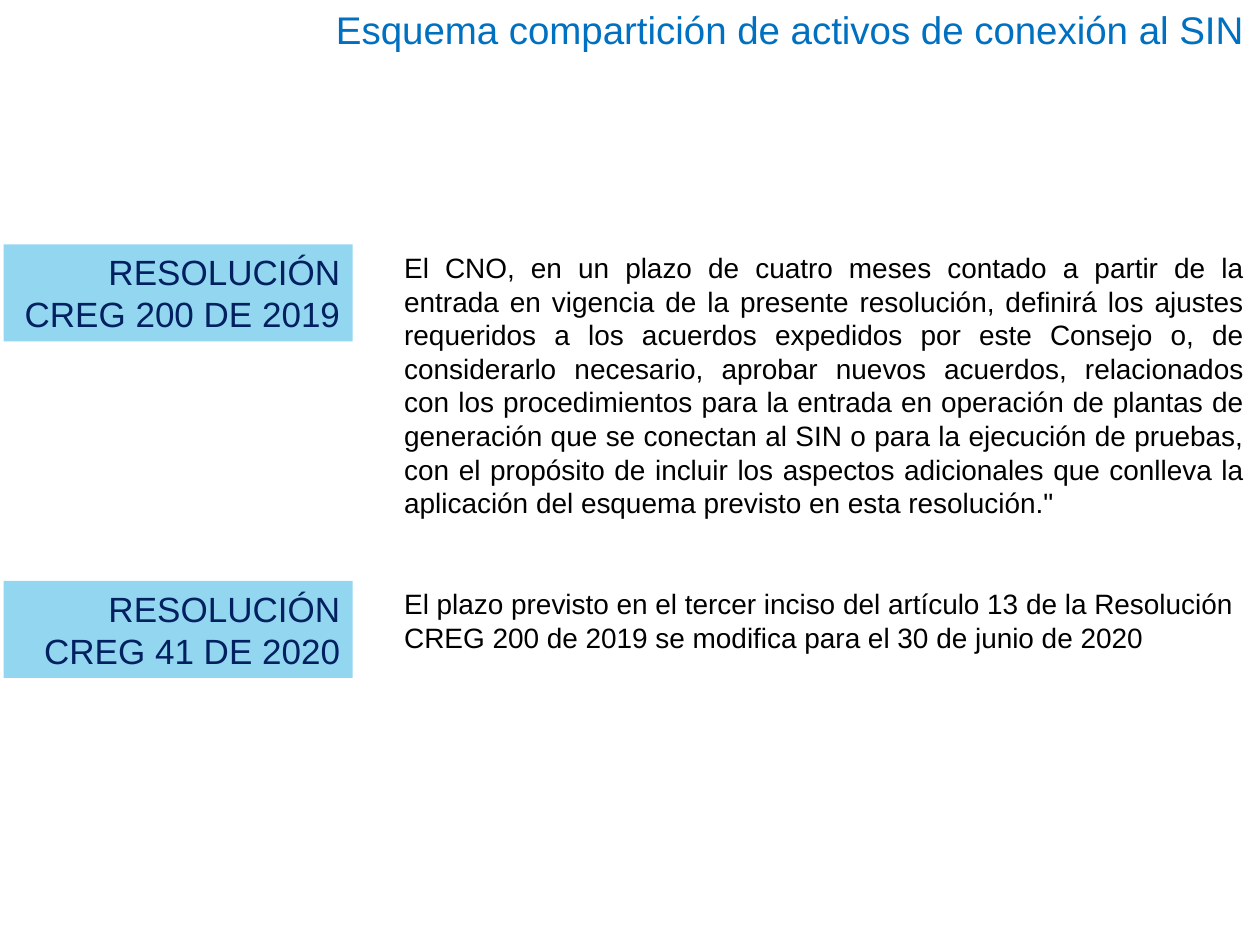
from pptx import Presentation
from pptx.dml.color import RGBColor
from pptx.enum.shapes import MSO_SHAPE
from pptx.enum.text import MSO_ANCHOR, PP_ALIGN
from pptx.util import Inches, Pt

RECT = MSO_SHAPE.RECTANGLE
TOP = MSO_ANCHOR.TOP
LEFT, RIGHT, JUSTIFY = PP_ALIGN.LEFT, PP_ALIGN.RIGHT, PP_ALIGN.JUSTIFY

SKY = RGBColor(0x92, 0xD6, 0xF0)
NAVY = RGBColor(0x00, 0x20, 0x60)
BLUE = RGBColor(0x00, 0x70, 0xC0)
BLACK = RGBColor(0x00, 0x00, 0x00)

# Resolutions: top, label, body, body height, body alignment
ROWS = [
    (1.94, "RESOLUCIÓN CREG 200 DE 2019",
     "El CNO, en un plazo de cuatro meses contado a partir de la entrada en "
     "vigencia de la presente resolución, definirá los ajustes requeridos a "
     "los acuerdos expedidos por este Consejo o, de considerarlo necesario, "
     "aprobar nuevos acuerdos, relacionados con los procedimientos para la "
     "entrada en operación de plantas de generación que se conectan al SIN o "
     "para la ejecución de pruebas, con el propósito de incluir los aspectos "
     "adicionales que conlleva la aplicación del esquema previsto en esta "
     'resolución."', 2.26, JUSTIFY),
    (4.61, "RESOLUCIÓN CREG 41 DE 2020",
     "El plazo previsto en el tercer inciso del artículo 13 de la Resolución "
     "CREG 200 de 2019 se modifica para el 30 de junio de 2020", 0.64, LEFT),
]


def write(shape, text, size=16, color=BLACK, align=LEFT, font="Arial"):
    frame = shape.text_frame
    frame.word_wrap = True
    frame.vertical_anchor = TOP
    para = frame.paragraphs[0]
    para.alignment = align
    run = para.add_run()
    run.text = text
    run.font.name = font
    run.font.size = Pt(size)
    run.font.color.rgb = color


class Page:
    def __init__(self, slide, fill=SKY, ink=NAVY):
        self.slide = slide
        self.fill = fill
        self.ink = ink

    def label(self, x, y, w, h, text):
        box = self.slide.shapes.add_shape(
            RECT, Inches(x), Inches(y), Inches(w), Inches(h))
        box.shadow.inherit = False
        box.fill.solid()
        box.fill.fore_color.rgb = self.fill
        box.line.fill.background()
        write(box, text, size=20, color=self.ink, align=RIGHT)

    def text(self, x, y, w, h, text, **style):
        box = self.slide.shapes.add_textbox(
            Inches(x), Inches(y), Inches(w), Inches(h))
        write(box, text, **style)


def main():
    deck = Presentation()
    deck.slide_width, deck.slide_height = Inches(10), Inches(7.5)
    page = Page(deck.slides.add_slide(deck.slide_layouts[6]))

    # Resolution labels with their text
    for top, name, body, height, align in ROWS:
        page.label(0.03, top, 2.77, 0.77, name)
        page.text(3.11, top, 6.86, height, body, align=align)

    # Title
    page.text(2.47, 0, 7.5, 0.47,
              "Esquema compartición de activos de conexión al SIN",
              size=22, color=BLUE, align=RIGHT)

    deck.save("out.pptx")


if __name__ == "__main__":
    main()
